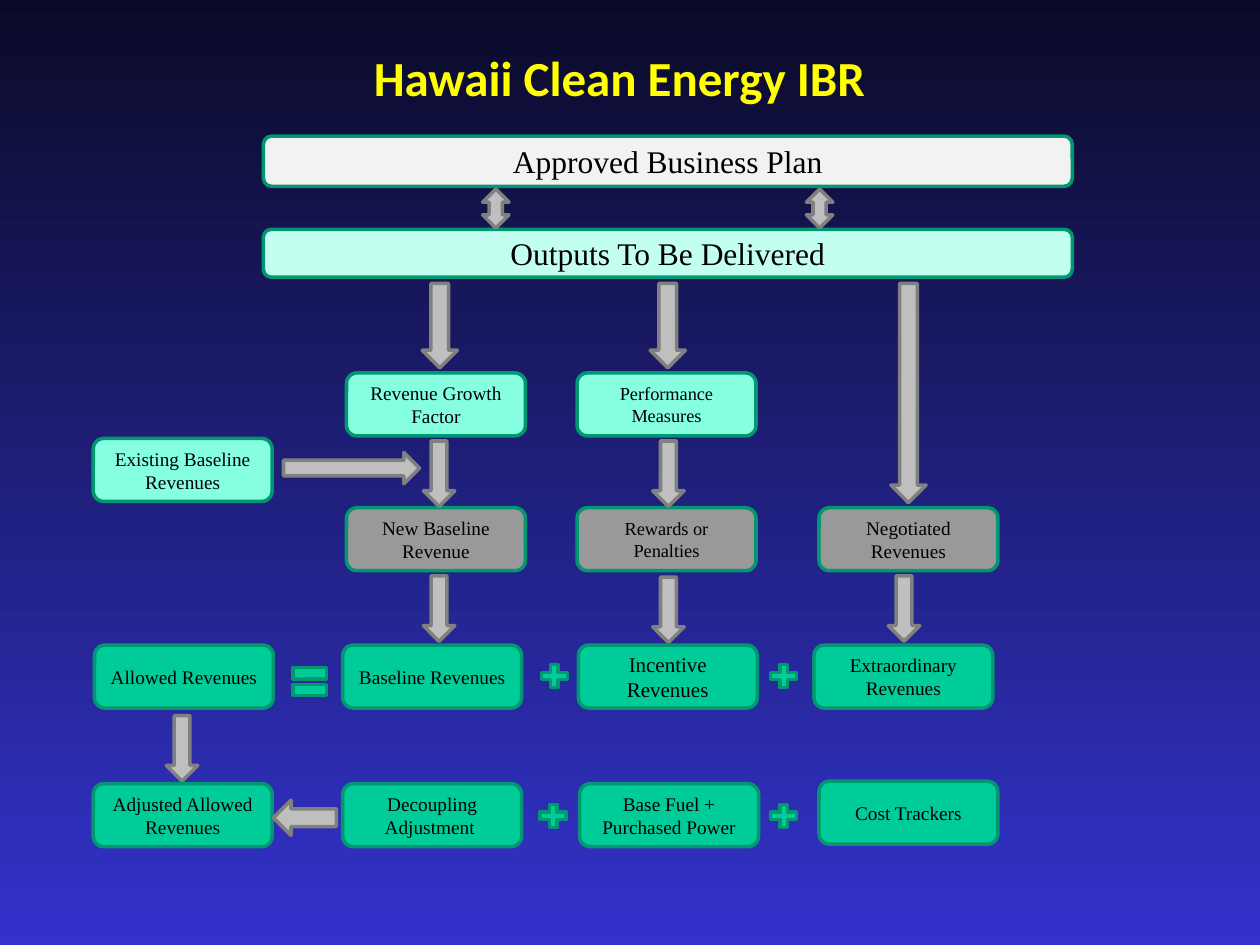
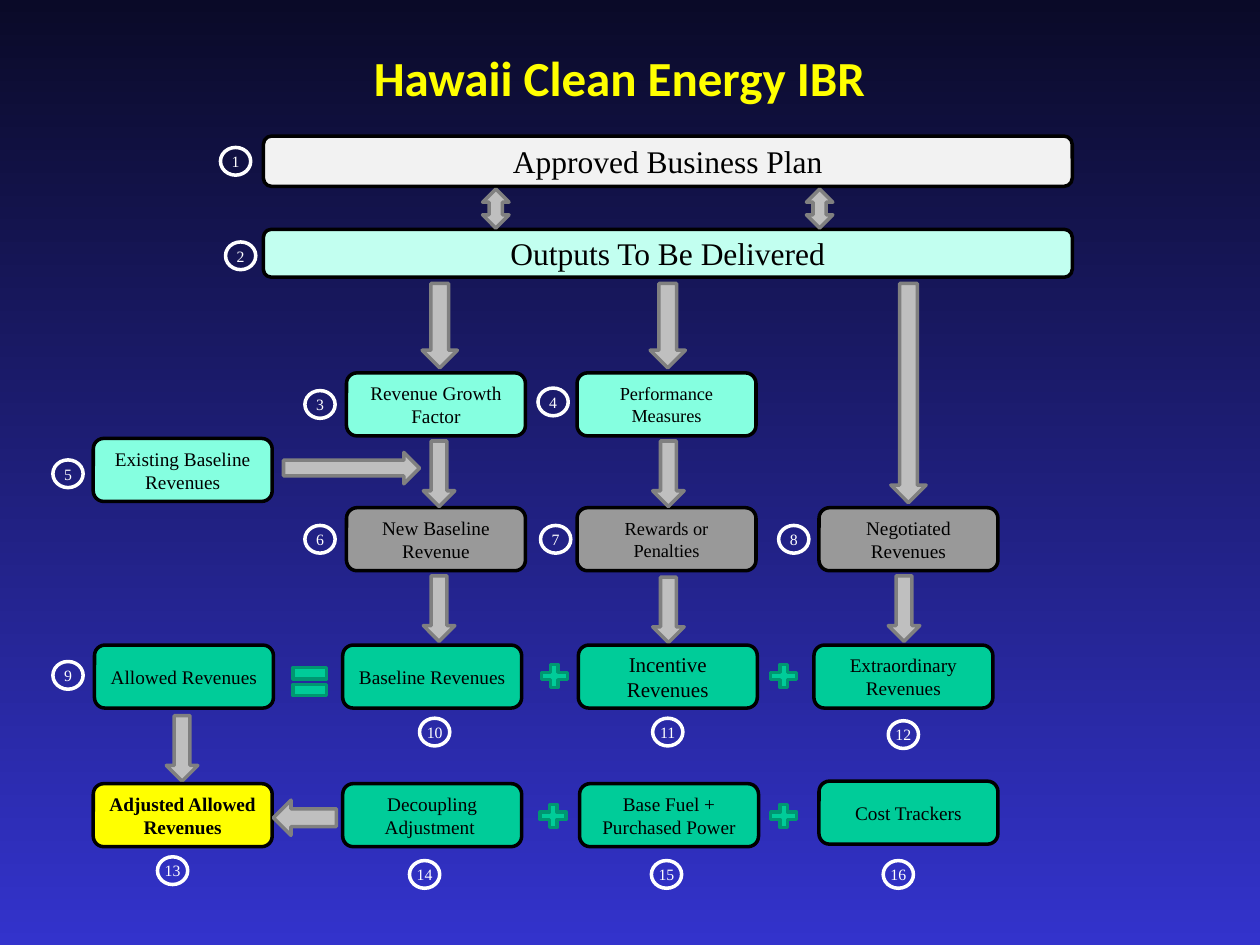
from pptx import Presentation
from pptx import util as u
from pptx.dml import color as c
from pptx.enum import shapes as s, text as t

KIND = s.MSO_SHAPE
HUE = dict(sky=("0A0A28", "3333CC"), rim="009771", ink="000000", pale="F2F2F2",
           ice="C2FFF0", mint="85FFE0", gray="999999", green="00CC99",
           gold="FFFF00", steel="BFBFBF", edge="808080", white="FFFFFF")
SERIF, SANS = "Times New Roman", "Calibri"
SIZE = (1.42, 0.5)
BAND = {"rim": HUE["rim"], "goal": HUE["green"], "bold": False, "marks": False}
MARK = {"rim": HUE["ink"], "goal": HUE["gold"], "bold": True, "marks": True}


def tint(hue):
    """Turn a hex string into a colour."""
    return c.RGBColor.from_string(hue)


def put(item, vals):
    """Set attributes from a dict of format values."""
    for name, val in vals.items():
        setattr(item, name, val)


def write(shape, words, size, hue, font=SERIF, bold=False):
    """Write centred text in a shape."""
    shape.text_frame.text = words
    para = shape.text_frame.paragraphs[0]
    para.alignment = t.PP_ALIGN.CENTER
    run = para.runs[0].font
    put(run, {"size": u.Pt(size), "name": font, "bold": bold})
    run.color.rgb = tint(hue)


def draw(slide, kind, x, y, w, h, fill, rim):
    """Add a flat preset shape with a two-point outline."""
    shape = slide.shapes.add_shape(kind, *map(u.Inches, (x, y, w, h)))
    shape.shadow.inherit = False
    if fill:
        shape.fill.solid()
        shape.fill.fore_color.rgb = tint(fill)
    else:
        shape.fill.background()
    shape.line.width = u.Pt(2)
    shape.line.color.rgb = tint(rim)
    return shape


def badge(slide, x, y, num):
    """Add a numbered ring."""
    ring = draw(slide, KIND.OVAL, x, y, 0.24, 0.22, None, HUE["white"])
    put(ring.text_frame, dict.fromkeys(
        ("margin_left", "margin_right", "margin_top", "margin_bottom"), 0))
    ring.text_frame.vertical_anchor = t.MSO_ANCHOR.MIDDLE
    write(ring, str(num), 9, HUE["white"])


def card(slide, look, x, y, words, fill, num, spot, size=11, dims=SIZE, bold=False):
    """Add a rounded box and, if the look has marks, its badge."""
    box = draw(slide, KIND.ROUNDED_RECTANGLE, x, y, *dims, fill, look["rim"])
    box.text_frame.vertical_anchor = t.MSO_ANCHOR.MIDDLE
    write(box, words, size, HUE["ink"], bold=bold)
    if look["marks"]:
        badge(slide, x + spot[0], y + spot[1], num)


def arrow(slide, x, y, w=0.25, h=0.52, kind=KIND.DOWN_ARROW):
    """Add a gray block arrow."""
    draw(slide, kind, x, y, w, h, HUE["steel"], HUE["edge"])


def sign(slide, x, y, w=0.28, h=0.25, kind=KIND.MATH_PLUS):
    """Add a green sum sign."""
    draw(slide, kind, x, y, w, h, HUE["green"], HUE["rim"])


def plan(slide, look, x, y):
    """Draw the plan and output bands and the arrows between them."""
    card(slide, look, x, y, "Approved Business Plan", HUE["pale"], 1,
         (-0.34, 0.09), 18, (6.42, 0.4))
    card(slide, look, x, y + 0.74, "Outputs To Be Delivered", HUE["ice"], 2,
         (-0.3, 0.1), 18, (6.42, 0.38))
    for dx in (1.74, 4.31):
        arrow(slide, x + dx, y + 0.42, 0.21, 0.31, KIND.UP_DOWN_ARROW)


def stage(slide, look, x, y):
    """Draw the factors that lead from the outputs to the revenues."""
    low = 1.78
    cards = [
        (2.01, 0.71, "Revenue Growth Factor", "mint", 3, (-0.33, 0.14), 11),
        (3.84, 0.71, "Performance Measures", "mint", 4, (-0.31, 0.12), 10.5),
        (0, 1.23, "Existing Baseline Revenues", "mint", 5, (-0.32, 0.17), 11),
        (2.01, low, "New Baseline Revenue", "gray", 6, (-0.33, 0.14), 11),
        (3.84, low, "Rewards or Penalties", "gray", 7, (-0.29, 0.14), 10.5),
        (5.76, low, "Negotiated Revenues", "gray", 8, (-0.32, 0.14), 11)]
    for dx, dy, words, hue, num, spot, size in cards:
        card(slide, look, x + dx, y + dy, words, HUE[hue], num, spot, size)
    for dx, tall in ((2.61, 0.67), (4.42, 0.67), (6.33, 1.74)):
        arrow(slide, x + dx, y, 0.28, tall)
    for dx, dy in ((2.62, 1.25), (4.44, 1.25), (2.62, 2.32), (4.44, 2.33), (6.31, 2.32)):
        arrow(slide, x + dx, y + dy)
    arrow(slide, x + 1.51, y + 1.34, 1.08, 0.25, KIND.RIGHT_ARROW)


def allow(slide, look, x, y):
    """Draw the sum of allowed revenues."""
    cards = [(0, "Allowed Revenues", 9, (-0.33, 0.13), 11),
             (1.97, "Baseline Revenues", 10, (0.61, 0.58), 11),
             (3.84, "Incentive Revenues", 11, (0.59, 0.58), 12),
             (5.71, "Extraordinary Revenues", 12, (0.59, 0.6), 11)]
    for dx, words, num, spot, size in cards:
        card(slide, look, x + dx, y, words, HUE["green"], num, spot, size)
    sign(slide, x + 1.53, y + 0.1, 0.36, 0.38, KIND.MATH_EQUAL)
    for dx in (3.51, 5.33):
        sign(slide, x + dx, y + 0.12)
    arrow(slide, x + 0.57, y + 0.56)


def adjust(slide, look, x, y):
    """Draw the sum of adjusted revenues."""
    card(slide, look, x, y, "Adjusted Allowed Revenues", look["goal"], 13,
         (0.51, 0.58), bold=look["bold"])
    cards = [(1.98, 0, "Decoupling Adjustment ", 14, (0.53, 0.61)),
             (3.86, 0, "Base Fuel + Purchased Power", 15, (0.57, 0.61)),
             (5.76, -0.02, "Cost Trackers", 16, (0.51, 0.63))]
    for dx, dy, words, num, spot in cards:
        card(slide, look, x + dx, y + dy, words, HUE["green"], num, spot)
    for dx in (3.51, 5.34):
        sign(slide, x + dx, y + 0.13)
    arrow(slide, x + 1.43, y + 0.13, 0.5, 0.28, KIND.LEFT_ARROW)


def chart(deck, look):
    """Build one flow slide in the given look."""
    slide = deck.slides.add_slide(deck.slide_layouts[5])
    title = slide.shapes.title
    put(title, {"left": u.Inches(0.66), "top": u.Inches(0.33),
                "width": u.Inches(8.51), "height": u.Inches(0.57)})
    put(title.text_frame, {"vertical_anchor": t.MSO_ANCHOR.TOP, "word_wrap": True,
                           "auto_size": t.MSO_AUTO_SIZE.NONE})
    write(title, "Hawaii Clean Energy IBR", 28, HUE["gold"], SANS, True)
    plan(slide, look, 2.09, 1.08)
    stage(slide, look, 0.74, 2.25)
    allow(slide, look, 0.75, 5.12)
    adjust(slide, look, 0.74, 6.22)


def main():
    """Build and save the deck."""
    deck = Presentation()
    put(deck, {"slide_width": u.Inches(10), "slide_height": u.Inches(7.5)})
    sky = deck.slide_master.background.fill
    sky.gradient()
    sky.gradient_angle = 270
    for stop, hue, place in zip(sky.gradient_stops, HUE["sky"], (0, 1)):
        stop.color.rgb = tint(hue)
        stop.position = place
    for look in (BAND, MARK):
        chart(deck, look)
    deck.save("out.pptx")


if __name__ == "__main__":
    main()
